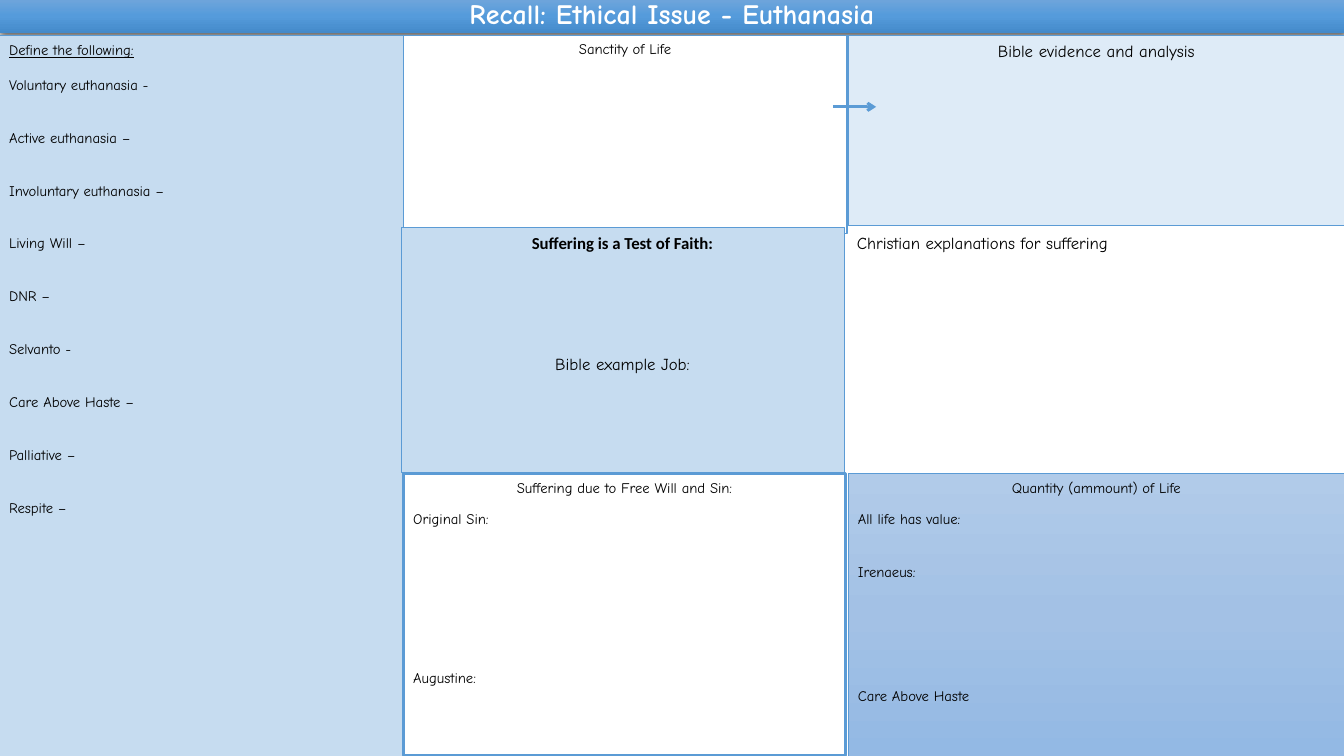
import pptx
import pptx.util
import pptx.dml.color
import pptx.enum.dml
import pptx.enum.shapes
import pptx.enum.text
import pptx.oxml
import pptx.oxml.ns
from lxml import etree

Inches, Pt = pptx.util.Inches, pptx.util.Pt
ALIGN = pptx.enum.text.PP_ALIGN
ANCHOR = pptx.enum.text.MSO_ANCHOR
qn = pptx.oxml.ns.qn

COLOURS = {
    "line": "5B9BD5", "text": "000000", "white": "FFFFFF",
    "pale": "DEEBF7", "light": "C6DCF0",
}
TITLE_GRADIENT = ["71A6DB", "559BDB", "448ACA"]
QUANTITY_GRADIENT = ["B1CBE9", "A3C1E5", "93B9E4"]
FONT = "Comic Neue"
SMALL, MEDIUM, LARGE = 10.5, 12, 20

WIDTH, HEIGHT = 13.33, 7.5
COLUMNS = [0, 4, 8.4, WIDTH]
ROWS = [0.35, 2.26, 4.7, HEIGHT]
BLANK_LINE = 12.6

CAMPAIGN = "Care Above Haste"
TERMS = ["Voluntary euthanasia -", "Active euthanasia –", "Involuntary euthanasia –",
         "Living Will –", "DNR –", "Selvanto -", f"{CAMPAIGN} –",
         "Palliative –", "Respite –"]


def cell(column, row, rows=1, nudge=(0, 0, 0, 0)):
    """Box of a grid cell; nudge moves its left, top, right and bottom edges."""
    edges = (COLUMNS[column], ROWS[row], COLUMNS[column + 1], ROWS[row + rows])
    left, top, right, bottom = (edge + shift for edge, shift in zip(edges, nudge))
    return left, top, right - left, bottom - top


def rgb(value):
    return pptx.dml.color.RGBColor.from_string(value)


def place(shape, box):
    shape.left, shape.top, shape.width, shape.height = map(Inches, box)


def paint(shape, fill, line_width=None):
    """Fill with one colour, or with a downward gradient when given a list."""
    if isinstance(fill, list):
        shape.fill.gradient()
        shape.fill.gradient_angle = 270
        stops = shape.element.spPr.find(".//" + qn("a:gsLst"))
        for stop in list(stops):
            stops.remove(stop)
        for index, colour in enumerate(fill):
            position = index * 100000 // (len(fill) - 1)
            stop = etree.SubElement(stops, qn("a:gs"), pos=str(position))
            etree.SubElement(stop, qn("a:srgbClr"), val=colour)
    else:
        shape.fill.solid()
        shape.fill.fore_color.rgb = rgb(fill)
    if line_width is None:
        shape.line.fill.background()
    else:
        shape.line.color.rgb = rgb(COLOURS["line"])
        shape.line.width = Pt(line_width)


def write(shape, entries, anchor=ANCHOR.TOP):
    """Entries are dicts: text, size, align, gap, bold, underline, font, colour."""
    frame = shape.text_frame
    frame.word_wrap = True
    frame.auto_size = pptx.enum.text.MSO_AUTO_SIZE.NONE
    frame.vertical_anchor = anchor
    for index, entry in enumerate(entries):
        paragraph = frame.paragraphs[0] if index == 0 else frame.add_paragraph()
        paragraph.alignment = entry.get("align", ALIGN.LEFT)
        paragraph.space_before = Pt(entry.get("gap", 0))
        run = paragraph.add_run()
        run.text = entry["text"]
        run.font.name = entry.get("font", FONT)
        run.font.size = Pt(entry.get("size", SMALL))
        run.font.bold = entry.get("bold", False)
        run.font.underline = entry.get("underline", False)
        run.font.color.rgb = rgb(entry.get("colour", COLOURS["text"]))


def heading(text, **options):
    return {"text": text, "align": ALIGN.CENTER, **options}


def title_bar(slide, box):
    title = slide.shapes.title
    place(title, box)
    paint(title, TITLE_GRADIENT)
    effects = etree.SubElement(title.element.spPr, qn("a:effectLst"))
    shadow = etree.SubElement(effects, qn("a:outerShdw"), blurRad=str(Pt(4.5)),
                              dist=str(Pt(1.5)), dir="5400000", rotWithShape="0")
    colour = etree.SubElement(shadow, qn("a:srgbClr"), val=COLOURS["text"])
    etree.SubElement(colour, qn("a:alpha"), val="63000")
    write(title, [heading("Recall: Ethical Issue - Euthanasia", size=LARGE, bold=True,
                          colour=COLOURS["white"])], ANCHOR.MIDDLE)
    title.text_frame.paragraphs[0].line_spacing = 0.9


def definitions(slide, box):
    body = slide.placeholders[1]
    place(body, box)
    paint(body, COLOURS["light"], 0.5)
    entries = [{"text": "Define the following:", "underline": True}]
    for index, term in enumerate(TERMS):
        entries.append({"text": term, "gap": BLANK_LINE * (2 if index else 1)})
    write(body, entries)
    for paragraph in body.text_frame.paragraphs:
        properties = paragraph._p.get_or_add_pPr()
        properties.set("marL", "0")
        properties.set("indent", "0")
        etree.SubElement(properties, qn("a:buNone"))


def panel(slide, box, fill, line_width, entries):
    shape = slide.shapes.add_shape(pptx.enum.shapes.MSO_SHAPE.RECTANGLE, *map(Inches, box))
    shape.shadow.inherit = False
    paint(shape, fill, line_width)
    write(shape, entries)


def explanations(slide, box):
    text_box = slide.shapes.add_textbox(*map(Inches, box))
    write(text_box, [{"text": "Christian explanations for suffering", "size": MEDIUM}])


def evidence_arrow(slide, left, right, y):
    arrow = slide.shapes.add_connector(pptx.enum.shapes.MSO_CONNECTOR.STRAIGHT,
                                       Inches(left), Inches(y), Inches(right), Inches(y))
    arrow.line.color.rgb = rgb(COLOURS["line"])
    arrow.line.width = Pt(2)
    etree.SubElement(arrow.line._get_or_add_ln(), qn("a:tailEnd"), type="arrow")
    etree.SubElement(arrow._element.spPr, qn("a:effectLst"))


def main():
    presentation = pptx.Presentation()
    presentation.slide_width, presentation.slide_height = Inches(WIDTH), Inches(HEIGHT)
    slide = presentation.slides.add_slide(presentation.slide_layouts[1])

    title_bar(slide, (0, -0.02, WIDTH, ROWS[0]))
    definitions(slide, cell(0, 0, rows=3, nudge=(-0.01, 0, 0, 0)))
    panel(slide, cell(1, 0, nudge=(0, 0, 0, 0.06)), COLOURS["white"], 1,
          [heading("Sanctity of Life")])
    panel(slide, cell(1, 1, nudge=(-0.02, 0, -0.03, -0.01)), COLOURS["light"], 0.5,
          [heading("Suffering is a Test of Faith:", size=MEDIUM, bold=True, font="Calibri"),
           heading("Bible example Job:", size=MEDIUM, gap=72)])
    panel(slide, cell(1, 2, nudge=(0, 0, -0.01, 0)), COLOURS["white"], 2.25,
          [heading("Suffering due to Free Will and Sin:"),
           {"text": "Original Sin:", "gap": 10},
           {"text": "Augustine:", "gap": 8 * BLANK_LINE}])
    panel(slide, cell(2, 2, nudge=(0.01, 0, 0.01, 0)), QUANTITY_GRADIENT, 0.5,
          [heading("Quantity (ammount) of Life"),
           {"text": "All life has value:", "gap": 10},
           {"text": "Irenaeus:", "gap": 2 * BLANK_LINE},
           {"text": CAMPAIGN, "gap": 6 * BLANK_LINE}])
    panel(slide, cell(2, 0, nudge=(0.01, 0, 0.01, -0.02)), COLOURS["pale"], 1,
          [heading("Bible evidence and analysis", size=MEDIUM)])
    left, top, width, _ = cell(2, 1)
    explanations(slide, (left, top, width, 0.54))
    evidence_arrow(slide, COLUMNS[2] - 0.14, COLUMNS[2] + 0.29, 1.06)

    presentation.save("out.pptx")


if __name__ == "__main__":
    main()
